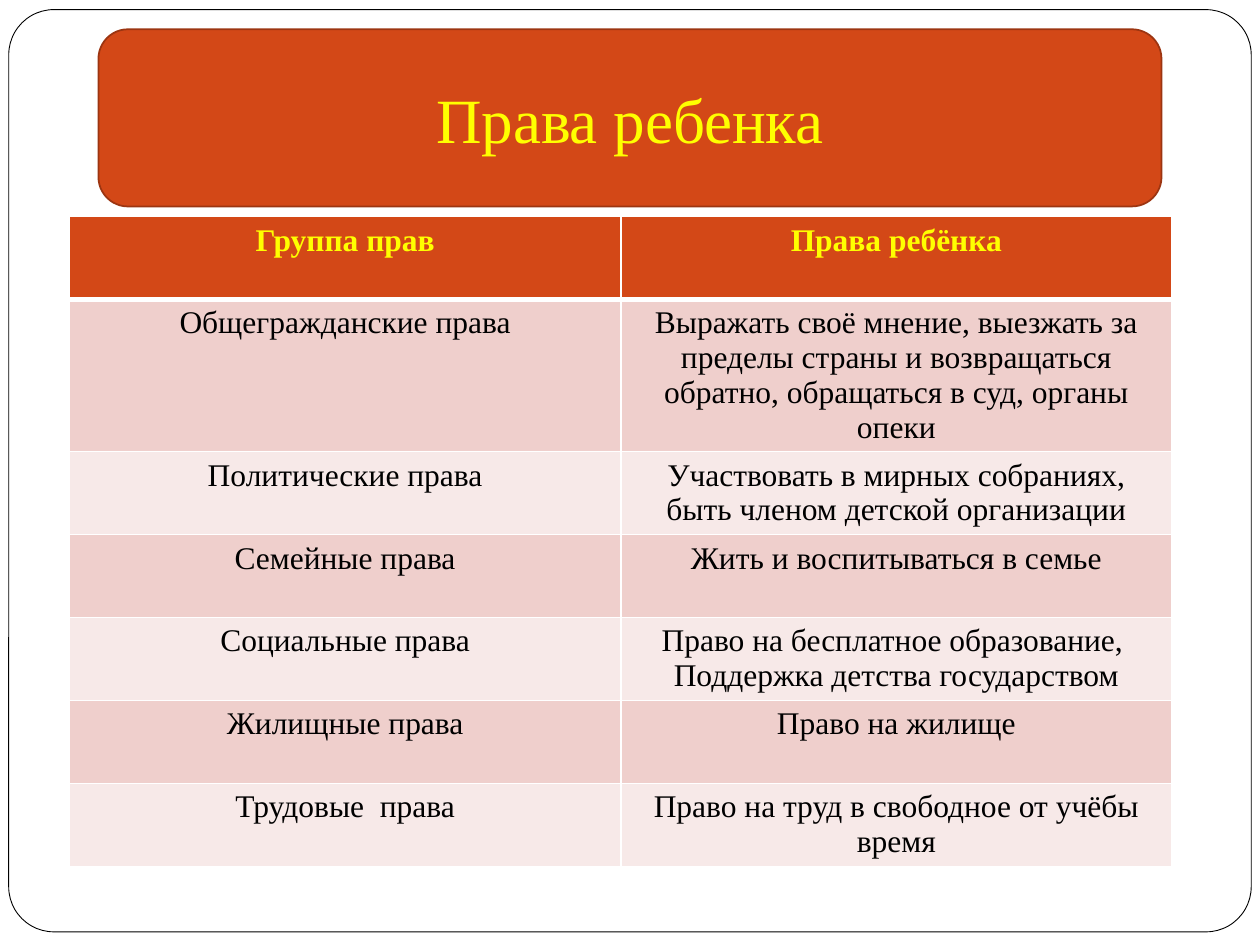
from lxml.etree import SubElement
from pptx import Presentation
from pptx.dml.color import RGBColor
from pptx.enum.shapes import MSO_SHAPE
from pptx.enum.text import MSO_ANCHOR, PP_ALIGN
from pptx.oxml.ns import qn
from pptx.util import Pt

WHITE = RGBColor(0xFF, 0xFF, 0xFF)
BLACK = RGBColor(0x00, 0x00, 0x00)
YELLOW = RGBColor(0xFF, 0xFF, 0x00)
ORANGE = RGBColor(0xD3, 0x48, 0x17)
BROWN = RGBColor(0x9C, 0x35, 0x11)
PINK = RGBColor(0xEF, 0xCF, 0xCC)
PALE_PINK = RGBColor(0xF7, 0xE9, 0xE8)

RIGHTS = [
    ("Группа прав", "Права ребёнка"),
    ("Общегражданские права",
     "Выражать своё мнение, выезжать за пределы страны и возвращаться "
     "обратно, обращаться в суд, органы опеки"),
    ("Политические права",
     "Участвовать в мирных собраниях, быть членом детской организации"),
    ("Семейные права", "Жить и воспитываться в семье"),
    ("Социальные права",
     "Право на бесплатное образование, \nПоддержка детства государством"),
    ("Жилищные права", "Право на жилище"),
    ("Трудовые  права", "Право на труд в свободное от учёбы время"),
]


class SlideBuilder:
    font = "Times New Roman"

    def __init__(self, slide):
        self.slide = slide

    def set_text(self, tf, text, size, color, bold=False):
        tf.text = text
        for p in tf.paragraphs:
            p.alignment = PP_ALIGN.CENTER
            p.font.name = self.font
            p.font.size = Pt(size)
            p.font.bold = bold
            p.font.color.rgb = color

    def rounded(self, box, fill, line, width, radius=0.1667):
        s = self.slide.shapes.add_shape(
            MSO_SHAPE.ROUNDED_RECTANGLE, *map(Pt, box))
        s.adjustments[0] = radius
        s.shadow.inherit = False
        s.fill.solid()
        s.fill.fore_color.rgb = fill
        s.line.color.rgb = line
        s.line.width = Pt(width)
        return s

    def title(self, box, text):
        s = self.rounded(box, ORANGE, BROWN, 1)
        s.text_frame.vertical_anchor = MSO_ANCHOR.MIDDLE
        self.set_text(s.text_frame, text, 36, YELLOW)

    def border(self, cell, side, width):
        tc_pr = cell._tc.get_or_add_tcPr()
        ln = SubElement(tc_pr, qn(f"a:ln{side}"), w=str(Pt(width)))
        fill = SubElement(ln, qn("a:solidFill"))
        SubElement(fill, qn("a:srgbClr"), val=str(WHITE))

    def table(self, left, top, col_width, row_height, rows):
        cols = len(rows[0])
        table = self.slide.shapes.add_table(
            len(rows), cols, Pt(left), Pt(top),
            Pt(col_width * cols), Pt(row_height * len(rows))).table
        for column in table.columns:
            column.width = Pt(col_width)
        for i, texts in enumerate(rows):
            table.rows[i].height = Pt(row_height)
            header = i == 0
            fill = ORANGE if header else (PALE_PINK, PINK)[i % 2]
            for j, text in enumerate(texts):
                cell = table.cell(i, j)
                for side in "LRTB":
                    thick = (header and side == "B") or (i == 1 and side == "T")
                    self.border(cell, side, 3 if thick else 1)
                cell.fill.solid()
                cell.fill.fore_color.rgb = fill
                self.set_text(cell.text_frame, text, 18,
                              YELLOW if header else BLACK, header)


def main():
    prs = Presentation()
    prs.slide_width, prs.slide_height = Pt(720), Pt(540)
    builder = SlideBuilder(prs.slides.add_slide(prs.slide_layouts[6]))
    builder.rounded((5, 5.5, 710, 527), WHITE, BLACK, 0.5, 0.049)
    builder.title((56.25, 16.75, 607.5, 101.25), "Права ребенка")
    builder.table(39.75, 123.75, 315, 47.4, RIGHTS)
    prs.save("out.pptx")


if __name__ == "__main__":
    main()
